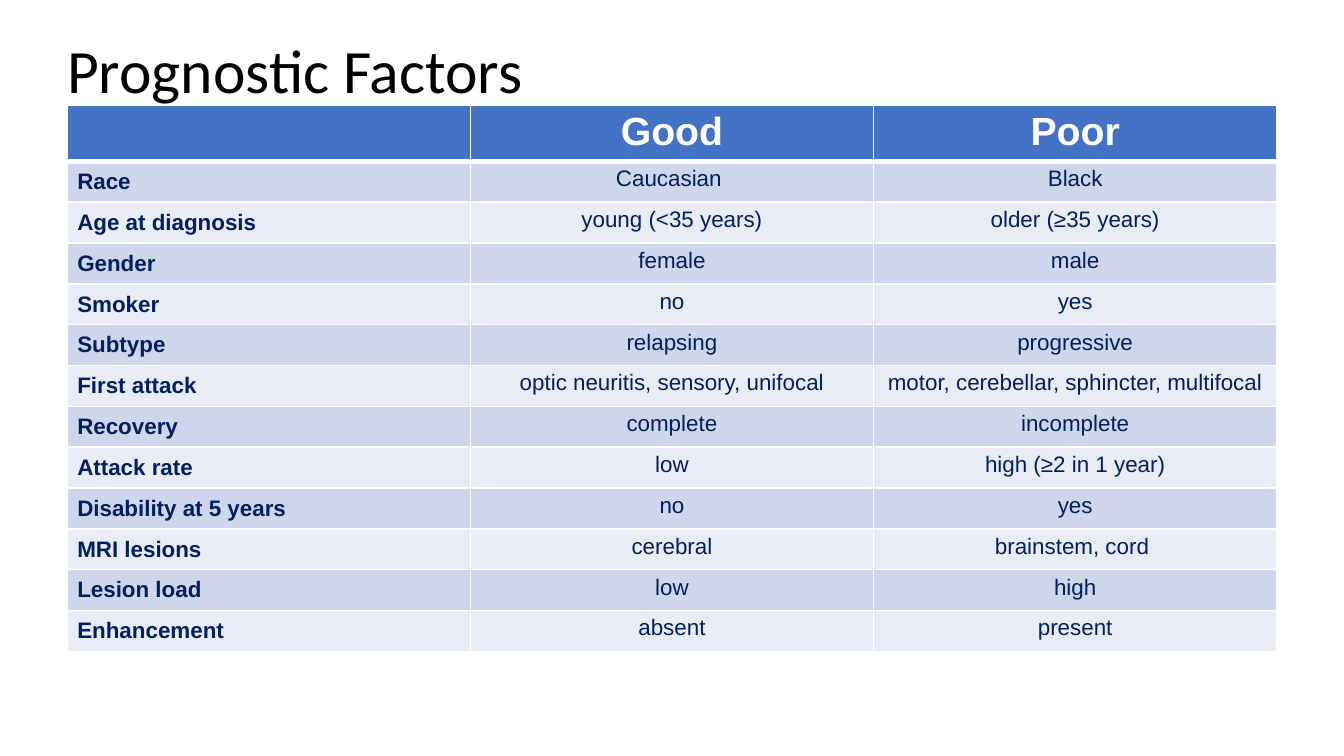
from lxml import etree
from pptx import Presentation
from pptx.dml.color import RGBColor
from pptx.enum.text import MSO_ANCHOR, PP_ALIGN
from pptx.oxml.ns import qn
from pptx.util import Inches, Pt

LEFT, CENTER = PP_ALIGN.LEFT, PP_ALIGN.CENTER
TOP, MIDDLE = MSO_ANCHOR.TOP, MSO_ANCHOR.MIDDLE
TITLE_ONLY = 5
SLIDE_W = 10
SLIDE_H = SLIDE_W * 9 / 16
MARGIN = 0.05 * SLIDE_W
CONTENT_W = SLIDE_W - 2 * MARGIN
HEADER_H = 0.42

COLORS = {
    "black": "000000",
    "white": "FFFFFF",
    "navy": "002060",
    "header": "4472C4",
    "odd": "CFD5EA",
    "even": "E9EBF5",
}

# Text formats
TITLE = {"name": "Calibri", "size": Pt(33), "bold": False}
HEADER = {"name": "Arial", "size": Pt(21), "bold": True}
LABEL = {"name": "Arial", "size": Pt(12), "bold": True}
VALUE = {"name": "Arial", "size": Pt(12), "bold": False}
CELL_MARGINS = {
    "margin_left": Pt(5.4), "margin_right": Pt(5.4),
    "margin_top": Pt(2.7), "margin_bottom": Pt(2.7),
}

FACTORS = [
    ("", "Good", "Poor"),
    ("Race", "Caucasian ", "Black"),
    ("Age at diagnosis", "young (<35 years)", "older (≥35 years)"),
    ("Gender", "female", "male"),
    ("Smoker", "no", "yes"),
    ("Subtype", "relapsing", "progressive"),
    ("First attack", "optic neuritis, sensory, unifocal",
     "motor, cerebellar, sphincter, multifocal"),
    ("Recovery", "complete", "incomplete"),
    ("Attack rate", "low", "high (≥2 in 1 year)"),
    ("Disability at 5 years", "no", "yes"),
    ("MRI lesions", "cerebral", "brainstem, cord "),
    ("Lesion load", "low", "high"),
    ("Enhancement", "absent", "present"),
]


def rgb(name):
    return RGBColor.from_string(COLORS[name])


def set_all(target, values):
    for name, value in values.items():
        setattr(target, name, value)


def write(p, text, style, color, align):
    p.alignment = align
    if text:
        r = p.add_run()
        r.text = text
        set_all(r.font, style)
        r.font.color.rgb = rgb(color)


def add_borders(cell, bottom_width):
    """Draw white cell edges; they must precede the fill in tcPr."""
    tc_pr = cell._tc.get_or_add_tcPr()
    for i, side in enumerate("LRTB"):
        width = bottom_width if side == "B" else 1
        ln = etree.Element(qn("a:ln" + side), w=str(Pt(width)))
        fill = etree.SubElement(ln, qn("a:solidFill"))
        etree.SubElement(fill, qn("a:srgbClr"), val=COLORS["white"])
        tc_pr.insert(i, ln)


def add_title(s, text, x, y, w, h):
    sp = s.shapes.title
    set_all(sp, {"left": Inches(x), "top": Inches(y),
                 "width": Inches(w), "height": Inches(h)})
    tf = sp.text_frame
    set_all(tf, {"margin_left": 0, "margin_right": 0, "word_wrap": True,
                 "vertical_anchor": MIDDLE})
    p = tf.paragraphs[0]
    p.line_spacing = 0.9
    write(p, text, TITLE, "black", LEFT)


def add_factor_table(s, rows, x, y, w, h):
    n_rows, n_cols = len(rows), len(rows[0])
    table = s.shapes.add_table(n_rows, n_cols, Inches(x), Inches(y),
                               Inches(w), Inches(h)).table
    for col in table.columns:
        col.width = Inches(w / n_cols)
    row_h = (h - HEADER_H) / (n_rows - 1)

    for i, row in enumerate(rows):
        is_header = i == 0
        table.rows[i].height = Inches(HEADER_H if is_header else row_h)
        band = "header" if is_header else "odd" if i % 2 else "even"
        for j, text in enumerate(row):
            is_label = j == 0 and not is_header
            style = HEADER if is_header else LABEL if is_label else VALUE
            cell = table.cell(i, j)
            set_all(cell, CELL_MARGINS)
            cell.vertical_anchor = MIDDLE if is_label else TOP
            cell.fill.solid()
            cell.fill.fore_color.rgb = rgb(band)
            add_borders(cell, 3 if is_header else 1)
            write(cell.text_frame.paragraphs[0], text, style,
                  "white" if is_header else "navy",
                  LEFT if is_label else CENTER)


def main():
    prs = Presentation()
    prs.slide_width, prs.slide_height = Inches(SLIDE_W), Inches(SLIDE_H)
    s = prs.slides.add_slide(prs.slide_layouts[TITLE_ONLY])
    add_title(s, "Prognostic Factors", MARGIN, 0.07, CONTENT_W, 0.95)
    add_factor_table(s, FACTORS, MARGIN, 0.78, CONTENT_W, 4.07)
    prs.save("out.pptx")


if __name__ == "__main__":
    main()
